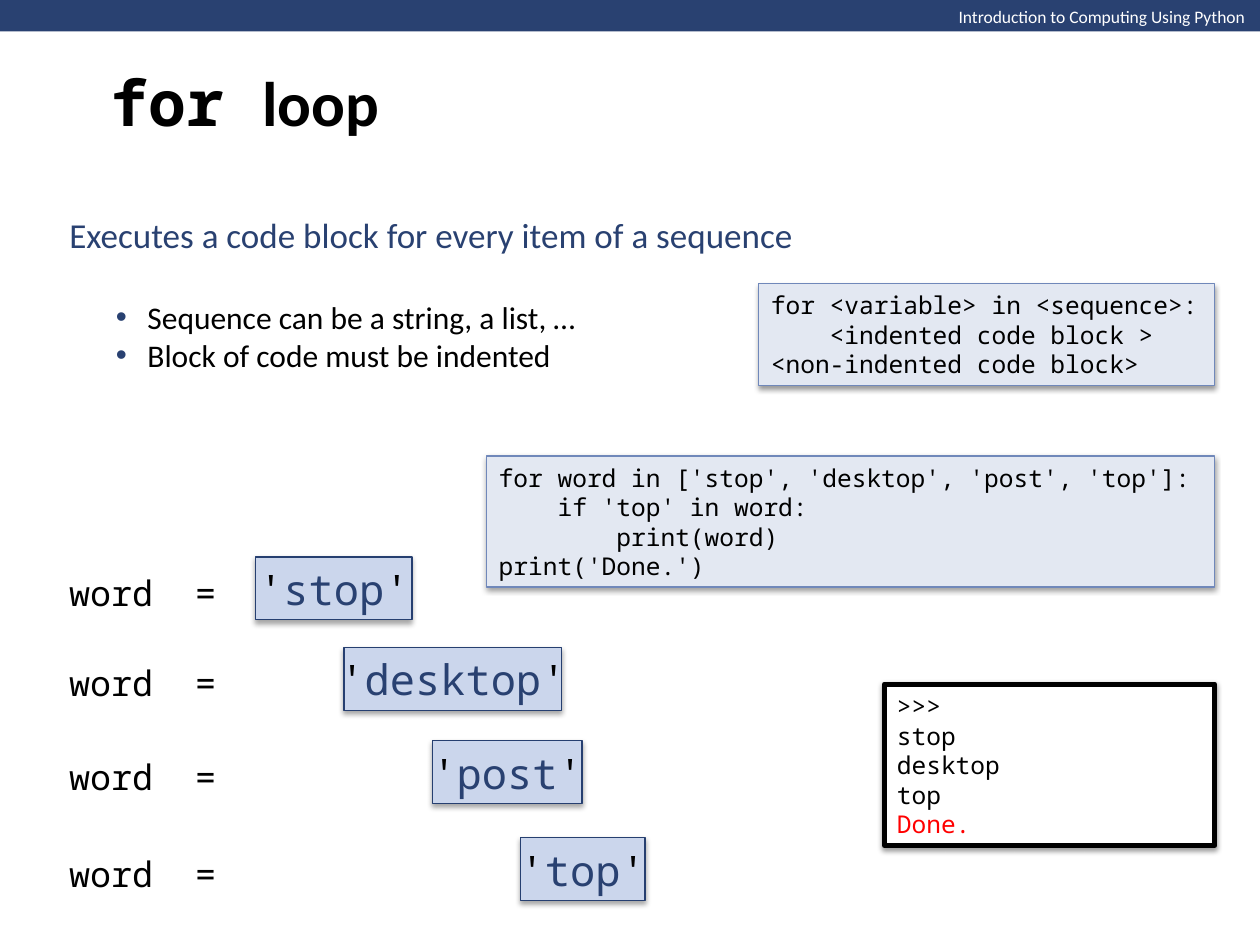
"""Build the slide that introduces the Python for loop."""
from lxml import etree
from pptx import Presentation
from pptx.dml.color import RGBColor
from pptx.enum.shapes import MSO_SHAPE
from pptx.enum.text import MSO_ANCHOR, MSO_AUTO_SIZE, PP_ALIGN
from pptx.oxml.ns import qn
from pptx.util import Inches, Pt

RECTANGLE = MSO_SHAPE.RECTANGLE
TOP, MIDDLE = MSO_ANCHOR.TOP, MSO_ANCHOR.MIDDLE
LEFT, CENTER = PP_ALIGN.LEFT, PP_ALIGN.CENTER
NO_FIT = MSO_AUTO_SIZE.NONE

THEME = {
    "sans": "Calibri", "mono": "Noto Sans Mono",
    "black": "000000", "white": "FFFFFF", "navy": "294171", "red": "FF0000",
    "code_fill": "E3E8F2", "code_line": "7088BA",
    "word_fill": "CBD6EC", "word_line": "263F70",
    "title": 36, "word": 24, "lead": 20, "bullet": 18, "code": 14, "header": 10,
}

HEADER = "Introduction to Computing Using Python"
TITLE = [("for ", {"font": "mono"}), ("loop", {})]
LEAD = "Executes a code block for every item of a sequence"
BULLETS = ["Sequence can be a string, a list, …", "Block of code must be indented"]
SYNTAX = [
    "for <variable> in <sequence>:",
    "    <indented code block >",
    "<non-indented code block>",
]
EXAMPLE = [
    "for word in ['stop', 'desktop', 'post', 'top']:",
    "    if 'top' in word:",
    "        print(word)",
    "print('Done.')",
]
OUTPUT = [">>>", "stop", "desktop", "top", [("Done.", {"color": "red"})]]
LABEL = "word  ="
ITERATIONS = [
    ("stop", 4.42, 1.24),
    ("desktop", 5.14, 1.73),
    ("post", 5.88, 1.19),
    ("top", 6.65, 0.99),
]

MARGIN = 0.45
RIGHT_EDGE = 9.64
WORD_LEFT, WORD_STEP, WORD_HEIGHT = 2.03, 0.7, 0.5
LABEL_DROP = 0.06


def rgb(name):
    return RGBColor.from_string(THEME[name])


def write(frame, paragraphs, font="sans", size="code", color="black", bold=False,
          align=LEFT, anchor=MIDDLE, wrap=True):
    """Fill a text frame; a paragraph is a string or a list of (text, format) runs."""
    frame.auto_size, frame.word_wrap, frame.vertical_anchor = NO_FIT, wrap, anchor
    for index, content in enumerate(paragraphs):
        paragraph = frame.add_paragraph() if index else frame.paragraphs[0]
        paragraph.alignment = align
        paragraph.space_before = Pt(0)
        runs = [(content, {})] if isinstance(content, str) else content
        for text, override in runs:
            look = {"font": font, "size": size, "color": color, **override}
            run = paragraph.add_run()
            run.text = text
            run.font.name = THEME[look["font"]]
            run.font.size = Pt(THEME[look["size"]])
            run.font.color.rgb = rgb(look["color"])
            run.font.bold = bold


def place(part, left, top, width, height):
    part.left, part.top = Inches(left), Inches(top)
    part.width, part.height = Inches(width), Inches(height)


def add_label(slide, box, text, **look):
    label = slide.shapes.add_textbox(*map(Inches, box))
    write(label.text_frame, [text], wrap=False, **look)


def add_panel(slide, box, fill, line=None, weight=0.75):
    panel = slide.shapes.add_shape(RECTANGLE, *map(Inches, box))
    panel.shadow.inherit = False
    panel.fill.solid()
    panel.fill.fore_color.rgb = rgb(fill)
    if line is None:
        panel.line.fill.background()
    else:
        panel.line.color.rgb = rgb(line)
        panel.line.width = Pt(weight)
    return panel


def cast_shadow(panel, opacity=38, distance=1.6):
    effects = panel.element.spPr.find(qn("a:effectLst"))
    shadow = etree.SubElement(
        effects, qn("a:outerShdw"), blurRad=str(Pt(3.1)), dist=str(Pt(distance)),
        dir="5400000", rotWithShape="0")
    tone = etree.SubElement(shadow, qn("a:srgbClr"), val=THEME["black"])
    etree.SubElement(tone, qn("a:alpha"), val=str(opacity * 1000))


def set_bullet(paragraph, char=None, left=0, hanging=0):
    properties = paragraph._p.get_or_add_pPr()
    properties.set("marL", str(Inches(left)))
    properties.set("indent", str(-Inches(hanging)))
    if char is None:
        etree.SubElement(properties, qn("a:buNone"))
        return
    tint = etree.SubElement(properties, qn("a:buClr"))
    etree.SubElement(tint, qn("a:srgbClr"), val=THEME["navy"])
    etree.SubElement(properties, qn("a:buFont"), typeface="Arial")
    etree.SubElement(properties, qn("a:buChar"), char=char)


def add_header(slide):
    add_panel(slide, (0, 0, 10, 0.25), "navy")
    add_label(slide, (7.51, 0, 2.5, 0.27), HEADER,
              size="header", color="white", anchor=TOP)


def fill_placeholders(slide):
    title, body = slide.shapes.title, slide.placeholders[1]
    place(title, 0.78, 0, 8.5, 1.61)
    write(title.text_frame, [TITLE], size="title", bold=True)

    place(body, MARGIN, 1.64, 5.97, 1.38)
    lead = [(LEAD, {"size": "lead", "color": "navy"})]
    write(body.text_frame, [lead, *BULLETS], size="bullet")
    opening, *points = body.text_frame.paragraphs
    opening.space_after = Pt(24)
    set_bullet(opening)
    for point in points:
        point.level = 1
        set_bullet(point, "•", left=0.62, hanging=0.25)


def add_code(slide, lines, top, width, height, fill="code_fill", line="code_line",
             weight=0.75):
    box = (RIGHT_EDGE - width, top, width, height)
    panel = add_panel(slide, box, fill, line, weight)
    cast_shadow(panel)
    write(panel.text_frame, lines, font="mono")


def add_iterations(slide):
    quote = ("'", {})
    for index, (word, top, width) in enumerate(ITERATIONS):
        add_label(slide, (MARGIN, top + LABEL_DROP, 1.38, 0.44), LABEL,
                  font="mono", size="lead")
        box = (WORD_LEFT + index * WORD_STEP, top, width, WORD_HEIGHT)
        panel = add_panel(slide, box, "word_fill", "word_line")
        cast_shadow(panel, opacity=35, distance=1.8)
        write(panel.text_frame, [[quote, (word, {"color": "navy"}), quote]],
              font="mono", size="word", align=CENTER, wrap=False)


def main():
    deck = Presentation()
    deck.slide_width, deck.slide_height = Inches(10), Inches(7.5)
    slide = deck.slides.add_slide(deck.slide_layouts[1])
    add_header(slide)
    fill_placeholders(slide)
    add_iterations(slide)
    add_code(slide, EXAMPLE, top=3.62, width=5.78, height=1.04)
    add_code(slide, SYNTAX, top=2.25, width=3.62, height=0.81)
    add_code(slide, OUTPUT, top=5.43, width=2.62, height=1.28,
             fill="white", line="black", weight=3)
    deck.save("out.pptx")


if __name__ == "__main__":
    main()
